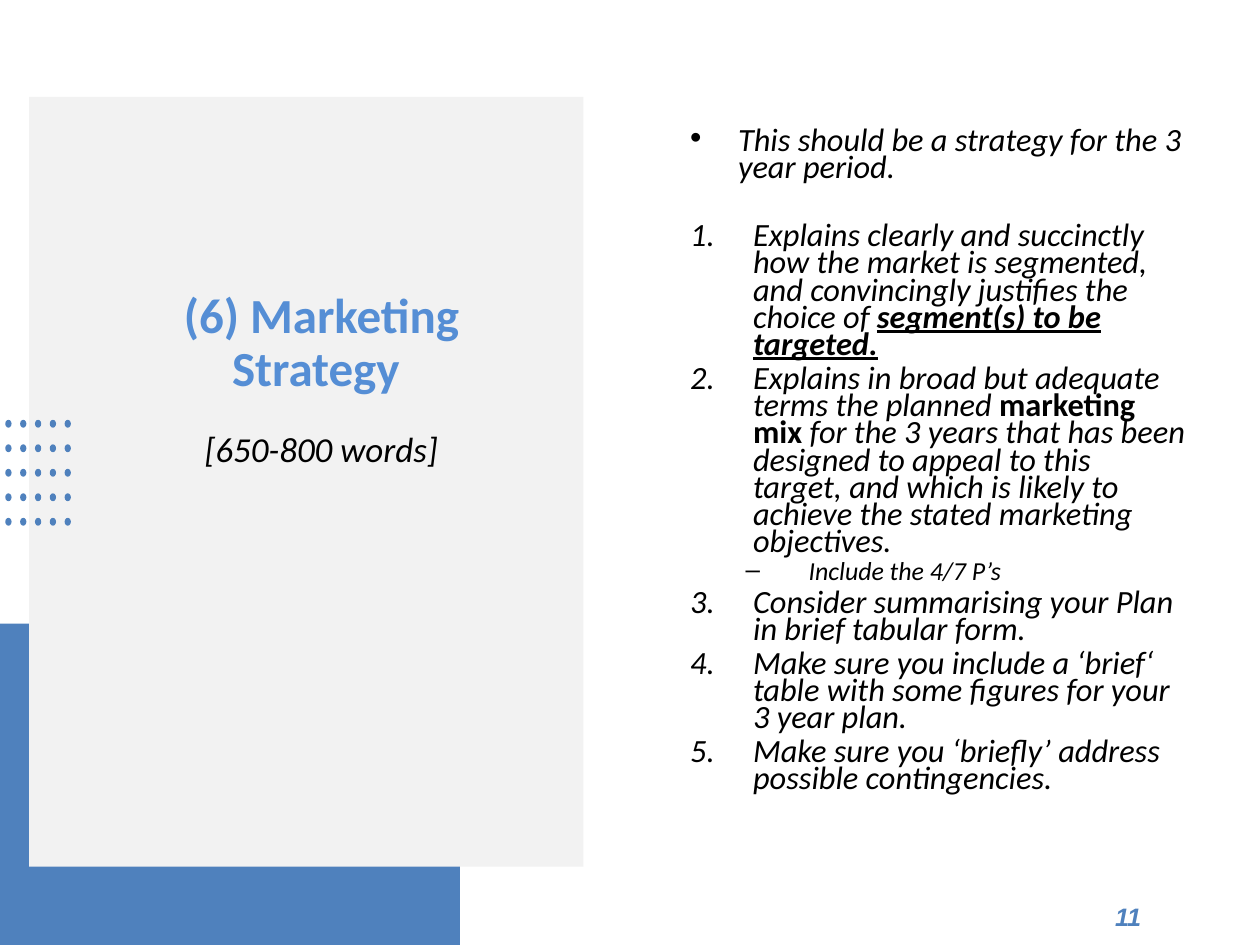
import dataclasses
import itertools

import pptx
import pptx.dml.color
import pptx.enum.shapes
import pptx.enum.text
import pptx.util
from lxml import etree
from pptx.oxml.ns import qn

Pt = pptx.util.Pt
Color = pptx.dml.color.RGBColor.from_string
Shapes = pptx.enum.shapes.MSO_SHAPE
Align = pptx.enum.text.PP_ALIGN
Anchor = pptx.enum.text.MSO_ANCHOR


@dataclasses.dataclass(frozen=True)
class Theme:
    accent: str = "4F81BD"
    panel: str = "F2F2F2"
    heading: str = "558ED5"
    text: str = "000000"
    font: str = "Calibri"
    number_font: str = "Arial"
    heading_size: float = 28
    note_size: float = 20
    body_size: float = 18.5
    sub_size: float = 14.8
    number_size: float = 14.4


THEME = Theme()
MARKERS = {
    "bullet": ("buChar", {"char": "•"}, 46.8, -27.4),
    "number": ("buAutoNum", {"type": "arabicPeriod"}, 55.4, -36),
    "dash": ("buChar", {"char": "–"}, 87.1, -36),
}
BODY = [
    ("bullet", 0, [("This should be a strategy for the 3 year period.", {})]),
    ("number", 23.1, [
        ("Explains clearly and succinctly how the market is segmented, "
         "and convincingly justifies the choice of ", {}),
        ("segment(s) to be targeted.", {"bold": True, "underline": True}),
    ]),
    ("number", 3.7, [
        ("Explains in broad but adequate terms the planned ", {}),
        ("marketing mix", {"bold": True, "italic": False}),
        (" for the 3 years that has been designed to appeal to this target, "
         "and which is likely to achieve the stated marketing objectives.", {}),
    ]),
    ("dash", 3, [("Include the 4/7 P’s", {})]),
    ("number", 3.7, [("Consider summarising your Plan in brief tabular form.", {})]),
    ("number", 3.7, [("Make sure you include a ‘brief‘ table with some figures "
                      "for your 3 year plan.", {})]),
    ("number", 3.7, [("Make sure you ‘briefly’ address possible contingencies.", {})]),
]


def set_values(target, values):
    for name, value in values.items():
        setattr(target, name, value)


def add_run(paragraph, text, size, color=THEME.text, font=THEME.font, **styles):
    run = paragraph.add_run()
    run.text = text
    set_values(run.font, {"size": Pt(size), "name": font, **styles})
    run.font.color.rgb = Color(color)


def add_filled_shape(shapes, kind, box, color):
    shape = shapes.add_shape(kind, *map(Pt, box))
    shape.shadow.inherit = False
    shape.fill.solid()
    shape.fill.fore_color.rgb = Color(color)
    shape.line.fill.background()


def add_text_frame(slide, box, top_inset):
    frame = slide.shapes.add_textbox(*map(Pt, box)).text_frame
    set_values(frame, {"word_wrap": True, "vertical_anchor": Anchor.TOP,
                       "margin_top": Pt(top_inset)})
    return frame


def add_marker(paragraph, marker):
    tag, attributes, margin, indent = MARKERS[marker]
    properties = paragraph._p.get_or_add_pPr()
    properties.set("marL", str(Pt(margin)))
    properties.set("indent", str(Pt(indent)))
    if tag == "buChar":
        etree.SubElement(properties, qn("a:buFont")).set("typeface", "Arial")
    etree.SubElement(properties, qn("a:" + tag), attributes)


def add_title(slide, box):
    frame = add_text_frame(slide, box, 60.7)
    heading = frame.paragraphs[0]
    note = frame.add_paragraph()
    for paragraph, space in ((heading, 0), (note, 20)):
        set_values(paragraph, {"alignment": Align.CENTER, "line_spacing": 0.9,
                               "space_before": Pt(space)})
    add_run(heading, "(6) Marketing Strategy ", THEME.heading_size, THEME.heading, bold=True)
    add_run(note, "[650-800 words]", THEME.note_size, italic=True)


def add_dot_grid(slide, box, count=5, dot_width=3.6, dot_height=4.5):
    left, top, width, height = box
    step_x = (width - dot_width) / (count - 1)
    step_y = (height - dot_height) / (count - 1)
    group = slide.shapes.add_group_shape()
    for column, row in itertools.product(range(count), repeat=2):
        dot = (left + column * step_x, top + row * step_y, dot_width, dot_height)
        add_filled_shape(group.shapes, Shapes.OVAL, dot, THEME.accent)


def add_body(slide, box):
    frame = add_text_frame(slide, box, 15.3)
    for index, (marker, space, runs) in enumerate(BODY):
        paragraph = frame.add_paragraph() if index else frame.paragraphs[0]
        is_sub = marker == "dash"
        set_values(paragraph, {"level": int(is_sub), "line_spacing": 0.7,
                               "space_before": Pt(space), "alignment": Align.LEFT})
        add_marker(paragraph, marker)
        size = THEME.sub_size if is_sub else THEME.body_size
        for text, styles in runs:
            add_run(paragraph, text, size, **{"italic": True, **styles})


def add_page_number(slide, box):
    shape = slide.shapes.add_shape(Shapes.OVAL, *map(Pt, box))
    shape.shadow.inherit = False
    shape.fill.background()
    shape.line.fill.background()
    shape.text_frame.vertical_anchor = Anchor.MIDDLE
    paragraph = shape.text_frame.paragraphs[0]
    set_values(paragraph, {"alignment": Align.RIGHT, "line_spacing": 0.7,
                           "space_after": Pt(6)})
    add_run(paragraph, "11", THEME.number_size, THEME.accent, THEME.number_font,
            bold=True, italic=True)


def main():
    presentation = pptx.Presentation()
    set_values(presentation, {"slide_width": Pt(720), "slide_height": Pt(540)})
    slide = presentation.slides.add_slide(presentation.slide_layouts[6])
    add_filled_shape(slide.shapes, Shapes.RECTANGLE, (0, 356.4, 262.8, 183.6), THEME.accent)
    add_filled_shape(slide.shapes, Shapes.RECTANGLE, (16.6, 55.4, 316.8, 439.9), THEME.panel)
    add_title(slide, (59.8, 105.8, 247.7, 328.3))
    add_dot_grid(slide, (3, 239.9, 37.5, 60.5))
    add_body(slide, (367.9, 59, 316.8, 421.9))
    add_page_number(slide, (594.7, 511.2, 75.6, 28.8))
    presentation.save("out.pptx")


if __name__ == "__main__":
    main()
